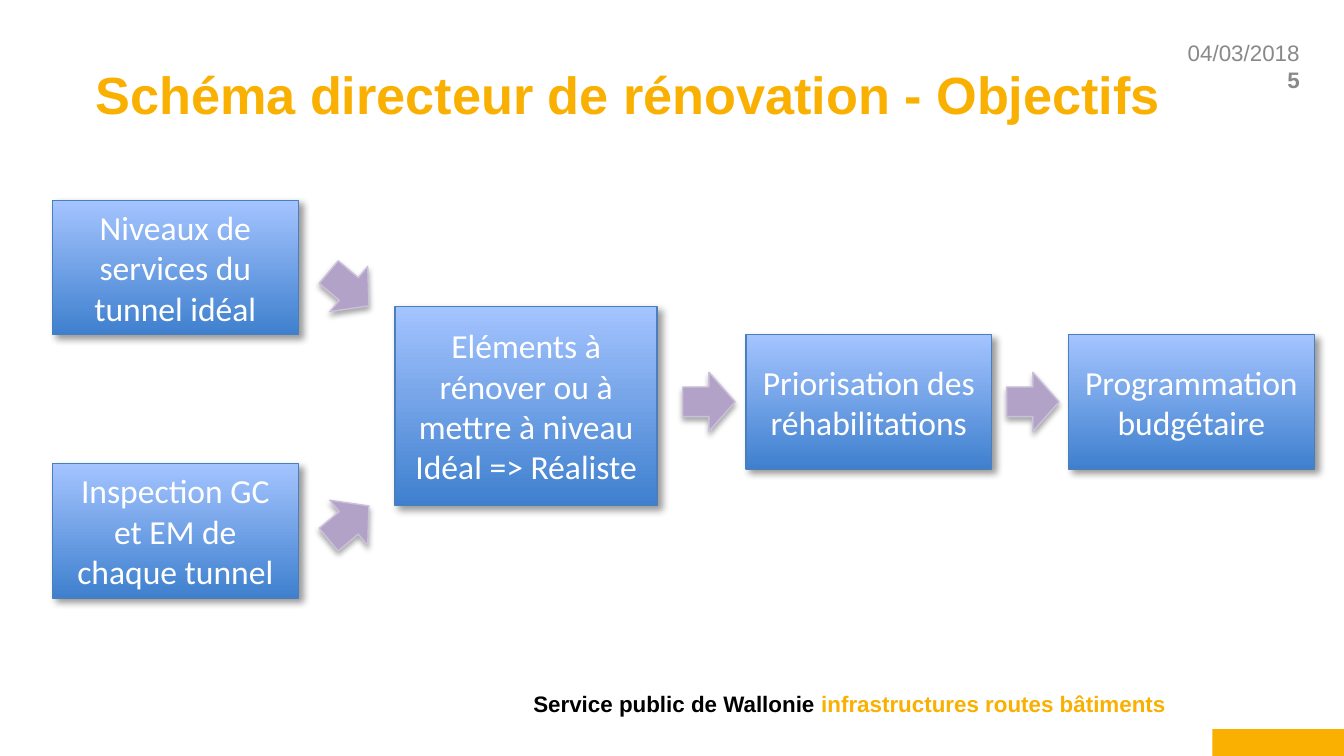
from lxml import etree
from pptx import Presentation
from pptx.dml.color import RGBColor
from pptx.enum.shapes import MSO_SHAPE
from pptx.enum.text import MSO_ANCHOR, PP_ALIGN
from pptx.oxml.ns import qn
from pptx.util import Inches, Pt

RECTANGLE, ARROW = MSO_SHAPE.RECTANGLE, MSO_SHAPE.RIGHT_ARROW
LEFT, CENTER, RIGHT = PP_ALIGN.LEFT, PP_ALIGN.CENTER, PP_ALIGN.RIGHT
TOP, MIDDLE = MSO_ANCHOR.TOP, MSO_ANCHOR.MIDDLE

WIDTH = 10
HEIGHT = WIDTH * 9 / 16
ORANGE, GREY, BLACK, WHITE = "F9B000", "898989", "000000", "FFFFFF"

TITLE = "Schéma directeur de rénovation - Objectifs"
DATE, PAGE_NUMBER = "04/03/2018", "5"
FOOTER = [("Service public de Wallonie ", BLACK),
          ("infrastructures routes bâtiments ", ORANGE)]

STEP_SIZE, MERGE_SIZE, ARROW_SIZE = (1.83, 1), (1.95, 1.48), (0.39, 0.44)
COLUMNS = [0.39, 2.94, 5.55, 7.95]
ARROW_COLUMNS = [2.4, 5.08, 7.49]
UPPER, MIDLINE, LOWER = 1.99, 2.99, 3.95  # centre lines of the rows

# text, column, centre line, size
STEPS = [
    ("Niveaux de services du tunnel idéal", 0, UPPER, STEP_SIZE),
    ("Inspection GC et EM de chaque tunnel", 0, LOWER, STEP_SIZE),
    ("Eléments à rénover ou à mettre à niveau Idéal => Réaliste", 1, 3.02, MERGE_SIZE),
    ("Programmation budgétaire", 3, MIDLINE, STEP_SIZE),
    ("Priorisation des réhabilitations", 2, MIDLINE, STEP_SIZE),
]
# column, centre line, rotation
ARROWS = [(0, 2.15, 40), (0, 3.89, 320), (1, MIDLINE, 0), (2, MIDLINE, 0)]


def color(value):
    return RGBColor.from_string(value)


def style_para(para, size, font, value=None, bold=False, align=LEFT):
    para.alignment = align
    para.font.size, para.font.name, para.font.bold = Pt(size), font, bold
    if value:
        para.font.color.rgb = color(value)


def add_shape(page, kind, left, top, size):
    shape = page.shapes.add_shape(kind, Inches(left), Inches(top), *map(Inches, size))
    shape.shadow.inherit = False
    return shape


def add_text_box(page, left, top, width, height, anchor):
    box = page.shapes.add_textbox(*map(Inches, (left, top, width, height)))
    box.text_frame.word_wrap = True
    box.text_frame.vertical_anchor = anchor
    return box.text_frame


def set_outline(shape, value):
    shape.line.color.rgb = color(value)
    shape.line.width = Pt(0.75)


def add_shadow(shape, opacity, blur, distance, angle):
    effects = shape.element.spPr.find(qn("a:effectLst"))
    shadow = etree.SubElement(effects, qn("a:outerShdw"), blurRad=str(Pt(blur)),
                              dist=str(Pt(distance)), dir=str(angle * 60000),
                              rotWithShape="0")
    shade = etree.SubElement(shadow, qn("a:srgbClr"), val=BLACK)
    etree.SubElement(shade, qn("a:alpha"), val=str(opacity * 1000))


def add_step(page, text, column, center, size):
    box = add_shape(page, RECTANGLE, COLUMNS[column], center - size[1] / 2, size)
    box.fill.gradient()
    box.fill.gradient_angle = 90
    for stop, position, value in zip(box.fill.gradient_stops, (0, 1), ("3F80CE", "A4C4FF")):
        stop.position = position
        stop.color.rgb = color(value)
    set_outline(box, "4B7EBC")
    add_shadow(box, 40, 4, 3, 45)
    frame = box.text_frame
    frame.word_wrap, frame.vertical_anchor = True, MIDDLE
    frame.text = text
    style_para(frame.paragraphs[0], 18, "Calibri", WHITE, align=CENTER)


def add_arrow(page, column, center, rotation):
    arrow = add_shape(page, ARROW, ARROW_COLUMNS[column], center - ARROW_SIZE[1] / 2, ARROW_SIZE)
    arrow.rotation = rotation
    arrow.fill.solid()
    arrow.fill.fore_color.rgb = color("B3A2C7")
    set_outline(arrow, "CCC1DA")
    add_shadow(arrow, 35, 3.1, 1.8, 90)


def add_frame_elements(page):
    """Add the date, page number, corner bar and footer."""
    frame = add_text_box(page, 7.8, 0.24, 1.97, 0.59, TOP)
    frame.text = f"{DATE}\n{PAGE_NUMBER}"
    for para, bold in zip(frame.paragraphs, (False, True)):
        style_para(para, 12, "Arial", GREY, bold, RIGHT)

    bar_size = (0.98, 0.2)
    bar = add_shape(page, RECTANGLE, WIDTH - bar_size[0], HEIGHT - bar_size[1], bar_size)
    bar.fill.solid()
    bar.fill.fore_color.rgb = color(ORANGE)
    bar.line.fill.background()

    para = add_text_box(page, 0, 4.84, 8.82, 0.79, MIDDLE).paragraphs[0]
    style_para(para, 12, "Arial", bold=True, align=RIGHT)
    for text, value in FOOTER:
        span = para.add_run()
        span.text = text
        span.font.color.rgb = color(value)


def add_title(page):
    title = page.shapes.title
    title.left, title.top, title.width, title.height = map(Inches, (0.61, 0.23, 8.6, 0.94))
    title.text_frame.text = TITLE
    title.text_frame.vertical_anchor = MIDDLE
    style_para(title.text_frame.paragraphs[0], 28, "Arial", ORANGE, bold=True)


def main():
    deck = Presentation()
    deck.slide_width, deck.slide_height = Inches(WIDTH), Inches(HEIGHT)
    page = deck.slides.add_slide(deck.slide_layouts.get_by_name("Title Only"))
    add_frame_elements(page)
    add_title(page)
    for step in STEPS:
        add_step(page, *step)
    for arrow in ARROWS:
        add_arrow(page, *arrow)
    deck.save("out.pptx")


if __name__ == "__main__":
    main()
